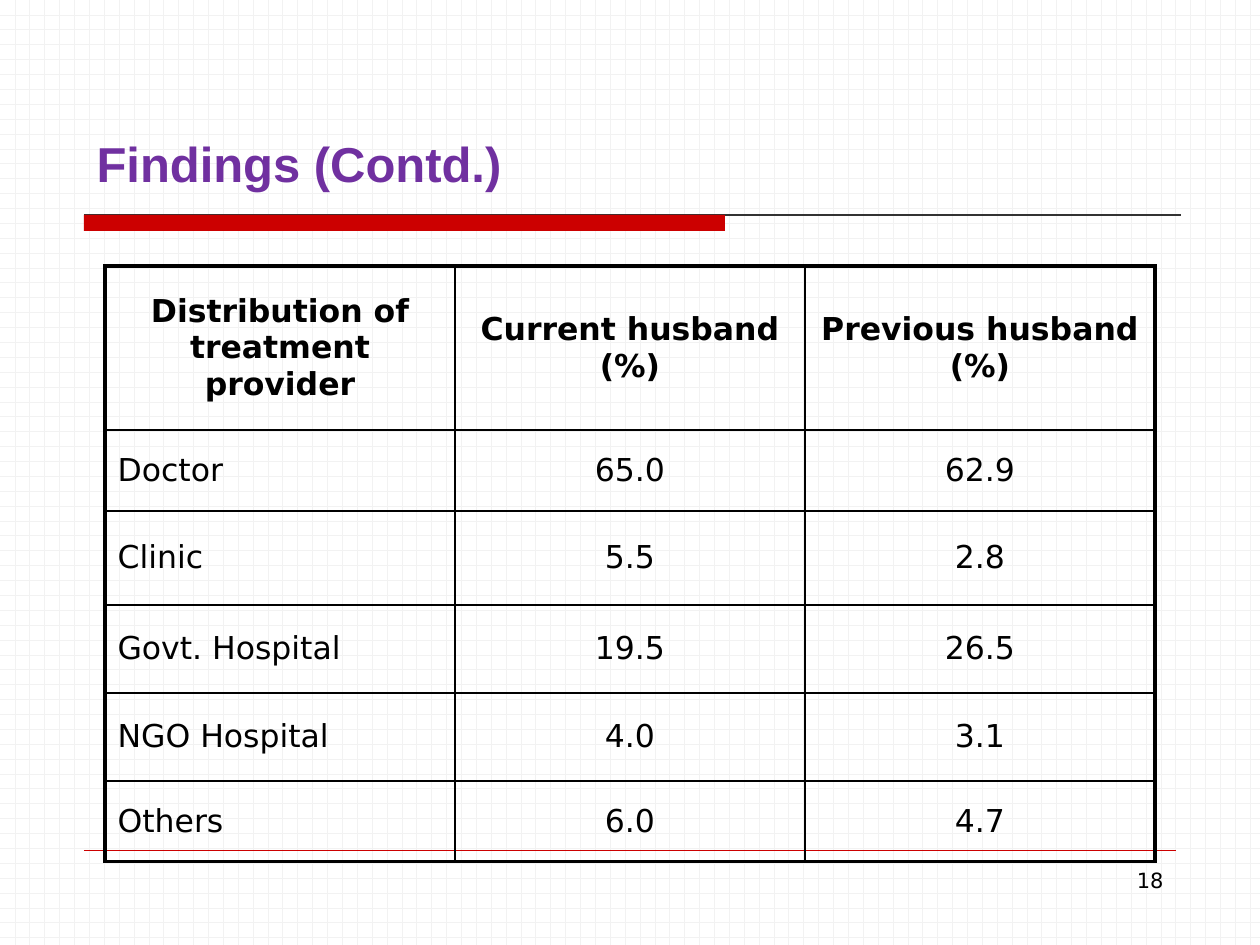
from dataclasses import dataclass
from typing import NamedTuple

from lxml.etree import SubElement
from pptx import Presentation
from pptx.dml.color import RGBColor
from pptx.enum.dml import MSO_PATTERN
from pptx.enum.shapes import MSO_CONNECTOR, MSO_SHAPE
from pptx.enum.text import MSO_ANCHOR, MSO_AUTO_SIZE, PP_ALIGN
from pptx.oxml import parse_xml
from pptx.oxml.ns import nsdecls, qn
from pptx.util import Emu, Pt

PX_PER_INCH = 126


@dataclass(frozen=True)
class Theme:
    title: str = "7030A0"
    accent: str = "CC0000"
    rule: str = "333333"
    ink: str = "000000"
    paper: str = "FFFFFF"
    grid: str = "F2F2F2"
    heading_font: str = "Arial"
    body_font: str = "DejaVu Sans"
    title_size: int = 28
    table_size: int = 18
    number_size: int = 12
    outer_border: float = 2.25
    inner_border: float = 1


class Rule(NamedTuple):
    left: int
    right: int
    y: int
    color: str
    width: float


class TableRow(NamedTuple):
    height: int
    texts: tuple


THEME = Theme()
RULES = (
    Rule(84, 1181, 215, THEME.rule, 0.75),
    Rule(84, 1176, 850, THEME.accent, 0.25),
)
ROWS = (
    TableRow(164, ("Distribution of treatment provider",
                   "Current husband\n(%)", "Previous husband\n(%)")),
    TableRow(81, ("Doctor", "65.0", "62.9")),
    TableRow(94, ("Clinic", "5.5", "2.8")),
    TableRow(88, ("Govt. Hospital", "19.5", "26.5")),
    TableRow(88, ("NGO Hospital", "4.0", "3.1")),
    TableRow(81, ("Others", "6.0", "4.7")),
)
COLUMN_WIDTH = 350


def px(length: int) -> Emu:
    return Emu(round(length * 914400 / PX_PER_INCH))


def rgb(color: str) -> RGBColor:
    return RGBColor.from_string(color)


def write(frame, text: str, align, color: str = THEME.ink, **font_format) -> None:
    """Fill a text frame, one paragraph a line, in a single format."""
    frame.text = text
    for para in frame.paragraphs:
        para.alignment = align
        for span in para.runs:
            span.font.color.rgb = rgb(color)
            for name, value in font_format.items():
                setattr(span.font, name, value)


def place(shape, left: int, top: int, width: int, height: int) -> None:
    box = {"left": left, "top": top, "width": width, "height": height}
    for name, value in box.items():
        setattr(shape, name, px(value))


def set_background(page) -> None:
    fill = page.background.fill
    fill.patterned()
    fill.pattern = MSO_PATTERN.HORIZONTAL_BRICK
    fill.fore_color.rgb = rgb(THEME.grid)
    fill.back_color.rgb = rgb(THEME.paper)


def add_rule(page, rule: Rule) -> None:
    line = page.shapes.add_connector(
        MSO_CONNECTOR.STRAIGHT, px(rule.left), px(rule.y), px(rule.right), px(rule.y))
    line.line.color.rgb = rgb(rule.color)
    line.line.width = Pt(rule.width)
    SubElement(line._element.spPr, qn("a:effectLst"))


def add_title_bar(page) -> None:
    bar = page.shapes.add_shape(
        MSO_SHAPE.RECTANGLE, px(84), px(215), px(641), px(16))
    bar.shadow.inherit = False
    bar.fill.solid()
    bar.fill.fore_color.rgb = rgb(THEME.accent)
    bar.line.fill.background()


def add_title(page) -> None:
    title = page.shapes.title
    place(title, 84, 127, 1092, 72)
    frame = title.text_frame
    write(frame, "Findings (Contd.)", PP_ALIGN.LEFT, THEME.title,
          name=THEME.heading_font, size=Pt(THEME.title_size), bold=True)
    settings = {"vertical_anchor": MSO_ANCHOR.BOTTOM, "word_wrap": True,
                "auto_size": MSO_AUTO_SIZE.NONE}
    for name, value in settings.items():
        setattr(frame, name, value)


def set_borders(cell, outer: dict) -> None:
    """Draw all four cell borders, thick on the sides marked as outer."""
    properties = cell._tc.get_or_add_tcPr()
    for index, (side, is_outer) in enumerate(outer.items()):
        width = Pt(THEME.outer_border if is_outer else THEME.inner_border)
        properties.insert(index, parse_xml(
            f'<a:ln{side} {nsdecls("a")} w="{width}"><a:solidFill>'
            f'<a:srgbClr val="{THEME.ink}"/></a:solidFill></a:ln{side}>'))


def add_provider_table(page) -> None:
    row_count, column_count = len(ROWS), len(ROWS[0].texts)
    table = page.shapes.add_table(
        row_count, column_count, px(105), px(266), px(COLUMN_WIDTH * column_count),
        px(sum(row.height for row in ROWS))).table
    table.first_row = table.horz_banding = False
    for column in table.columns:
        column.width = px(COLUMN_WIDTH)
    for r, row in enumerate(ROWS):
        table.rows[r].height = px(row.height)
        for c, text in enumerate(row.texts):
            cell = table.cell(r, c)
            cell.fill.background()
            cell.vertical_anchor = MSO_ANCHOR.MIDDLE
            is_label = r > 0 and c == 0
            write(cell.text_frame, text, PP_ALIGN.LEFT if is_label else PP_ALIGN.CENTER,
                  name=THEME.body_font, size=Pt(THEME.table_size), bold=r == 0)
            set_borders(cell, {"L": c == 0, "R": c == column_count - 1,
                               "T": r == 0, "B": r == row_count - 1})


def add_page_number(page) -> None:
    box = page.shapes.add_textbox(px(903), px(861), px(273), px(66))
    box.text_frame.word_wrap = True
    write(box.text_frame, "18", PP_ALIGN.RIGHT,
          name=THEME.body_font, size=Pt(THEME.number_size))


def main() -> None:
    deck = Presentation()
    deck.slide_width, deck.slide_height = px(1260), px(945)
    page = deck.slides.add_slide(deck.slide_layouts.get_by_name("Title Only"))
    set_background(page)
    for rule in RULES:
        add_rule(page, rule)
    add_title_bar(page)
    add_title(page)
    add_provider_table(page)
    add_page_number(page)
    deck.save("out.pptx")


if __name__ == "__main__":
    main()
